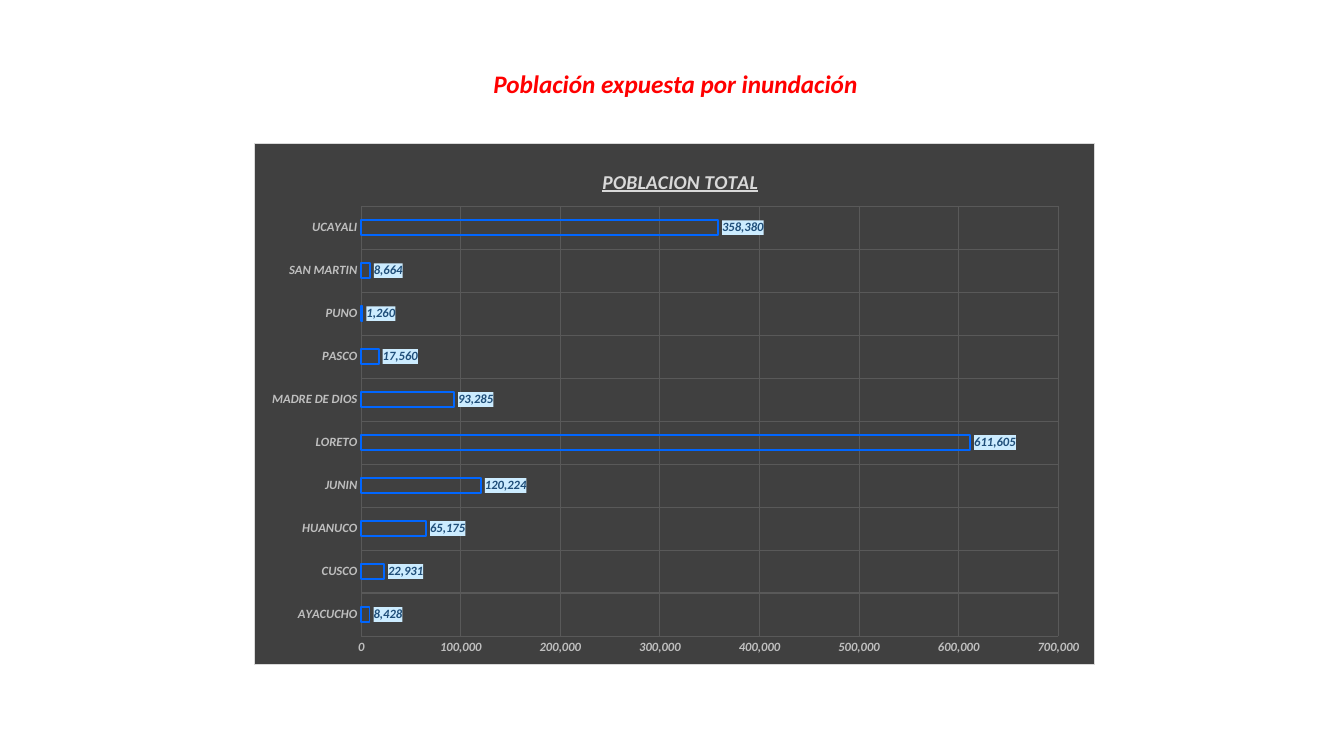
from dataclasses import dataclass

from lxml import etree
from pptx import Presentation
from pptx.chart.data import CategoryChartData
from pptx.dml.color import RGBColor
from pptx.enum.chart import XL_CHART_TYPE as ChartType
from pptx.enum.chart import XL_LABEL_POSITION as LabelPosition
from pptx.enum.chart import XL_TICK_MARK as TickMark
from pptx.enum.text import MSO_AUTO_SIZE as AutoSize
from pptx.enum.text import PP_ALIGN as Align
from pptx.oxml import parse_xml
from pptx.oxml.ns import nsdecls, qn
from pptx.util import Inches, Pt

RED = RGBColor(0xFF, 0x00, 0x00)
BLACK = RGBColor(0x00, 0x00, 0x00)
CHARCOAL = RGBColor(0x40, 0x40, 0x40)
GRID_GRAY = RGBColor(0x59, 0x59, 0x59)
AXIS_GRAY = RGBColor(0xBF, 0xBF, 0xBF)
LIGHT_GRAY = RGBColor(0xD9, 0xD9, 0xD9)
BAR_BLUE = RGBColor(0x00, 0x66, 0xFF)
LABEL_NAVY = RGBColor(0x1F, 0x4E, 0x79)
LABEL_SKY = RGBColor(0xCC, 0xEC, 0xFF)
FONT = "Calibri"
NUMBER_FORMAT = "#,##0"


@dataclass(frozen=True)
class Region:
    name: str
    population: int


REGIONS = [
    Region("AYACUCHO", 8428),
    Region("CUSCO", 22931),
    Region("HUANUCO", 65175),
    Region("JUNIN", 120224),
    Region("LORETO", 611605),
    Region("MADRE DE DIOS", 93285),
    Region("PASCO", 17560),
    Region("PUNO", 1260),
    Region("SAN MARTIN", 8664),
    Region("UCAYALI", 358380),
]


def style_font(font, size: float, color: RGBColor, bold: bool = True,
               italic: bool = True, underline: bool = False) -> None:
    font.name = FONT
    font.size = Pt(size)
    font.bold = bold
    font.italic = italic
    font.underline = underline
    font.color.rgb = color


def write_text(frame, text: str, **font_format) -> None:
    paragraph = frame.paragraphs[0]
    paragraph.alignment = Align.CENTER
    run = paragraph.add_run()
    run.text = text
    style_font(run.font, **font_format)


def area_format(fill: RGBColor, border: RGBColor | None = None) -> etree._Element:
    outline = (
        f'<a:ln w="{Pt(0.75)}"><a:solidFill><a:srgbClr val="{border}"/></a:solidFill></a:ln>'
        if border else ""
    )
    return parse_xml(
        f'<c:spPr {nsdecls("c", "a")}><a:solidFill><a:srgbClr val="{fill}"/></a:solidFill>'
        f"{outline}</c:spPr>"
    )


def place_part(part: etree._Element, index: int, target: str = "", **fractions: float) -> None:
    for previous in part.findall(qn("c:layout")):
        part.remove(previous)
    target_xml = f'<c:layoutTarget val="{target}"/>' if target else ""
    modes = "".join(f'<c:{side}Mode val="edge"/>' for side in ("x", "y"))
    sizes = "".join(f'<c:{side} val="{value}"/>' for side, value in fractions.items())
    part.insert(index, parse_xml(
        f'<c:layout {nsdecls("c")}><c:manualLayout>{target_xml}{modes}{sizes}'
        "</c:manualLayout></c:layout>"
    ))


def style_axis(axis) -> None:
    axis.major_tick_mark = TickMark.NONE
    axis.minor_tick_mark = TickMark.NONE
    axis.format.line.fill.background()
    axis.has_major_gridlines = True
    gridline = axis.major_gridlines.format.line
    gridline.color.rgb = GRID_GRAY
    gridline.width = Pt(0.75)
    style_font(axis.tick_labels.font, 9, AXIS_GRAY)


def style_bars(plot) -> None:
    plot.gap_width = 182
    plot.overlap = -50
    plot.vary_by_categories = False
    bars = plot.series[0]
    bars.invert_if_negative = False
    bars.format.fill.background()
    bars.format.line.color.rgb = BAR_BLUE
    bars.format.line.width = Pt(1.25)
    labels = bars.data_labels
    labels.show_value = True
    labels.position = LabelPosition.OUTSIDE_END
    labels.number_format = NUMBER_FORMAT
    labels.number_format_is_linked = False
    style_font(labels.font, 9, LABEL_NAVY)
    label_text = labels._element.find(qn("c:txPr"))
    label_text.addprevious(area_format(LABEL_SKY))


def add_population_chart(slide) -> None:
    population = CategoryChartData(number_format=NUMBER_FORMAT)
    population.categories = [region.name for region in REGIONS]
    population.add_series("Series 1", [region.population for region in REGIONS])
    chart = slide.shapes.add_chart(
        ChartType.BAR_CLUSTERED, Inches(2.52), Inches(1.42), Inches(8.34), Inches(5.18), population
    ).chart
    style_font(chart.font, 10, BLACK, bold=False, italic=False)
    chart.has_legend = False
    chart.has_title = True
    write_text(chart.chart_title.text_frame, "POBLACION TOTAL",
               size=14, color=LIGHT_GRAY, underline=True)
    chart.chart_title.include_in_layout = False
    for axis in (chart.category_axis, chart.value_axis):
        style_axis(axis)
    chart.value_axis.minimum_scale = 0
    chart.value_axis.maximum_scale = 700000
    chart.value_axis.major_unit = 100000
    chart.value_axis.tick_labels.number_format = NUMBER_FORMAT
    chart.value_axis.tick_labels.number_format_is_linked = False
    style_bars(chart.plots[0])

    chart_body = chart._chartSpace.find(qn("c:chart"))
    chart_body.addnext(area_format(CHARCOAL, LIGHT_GRAY))
    place_part(chart_body.find(qn("c:title")), 1, x=0.41, y=0.04)
    place_part(chart_body.find(qn("c:plotArea")), 0, "inner", x=0.127, y=0.12, w=0.83, h=0.825)


def add_heading(slide) -> None:
    heading = slide.shapes.add_textbox(Inches(4.77), Inches(0.63), Inches(3.86), Inches(0.4))
    heading.text_frame.word_wrap = False
    heading.text_frame.auto_size = AutoSize.SHAPE_TO_FIT_TEXT
    write_text(heading.text_frame, "Población expuesta por inundación", size=18, color=RED)


def main() -> None:
    presentation = Presentation()
    presentation.slide_width = Inches(13.33)
    presentation.slide_height = Inches(7.5)
    slide = presentation.slides.add_slide(presentation.slide_layouts[6])
    add_heading(slide)
    add_population_chart(slide)
    presentation.save("out.pptx")


if __name__ == "__main__":
    main()
